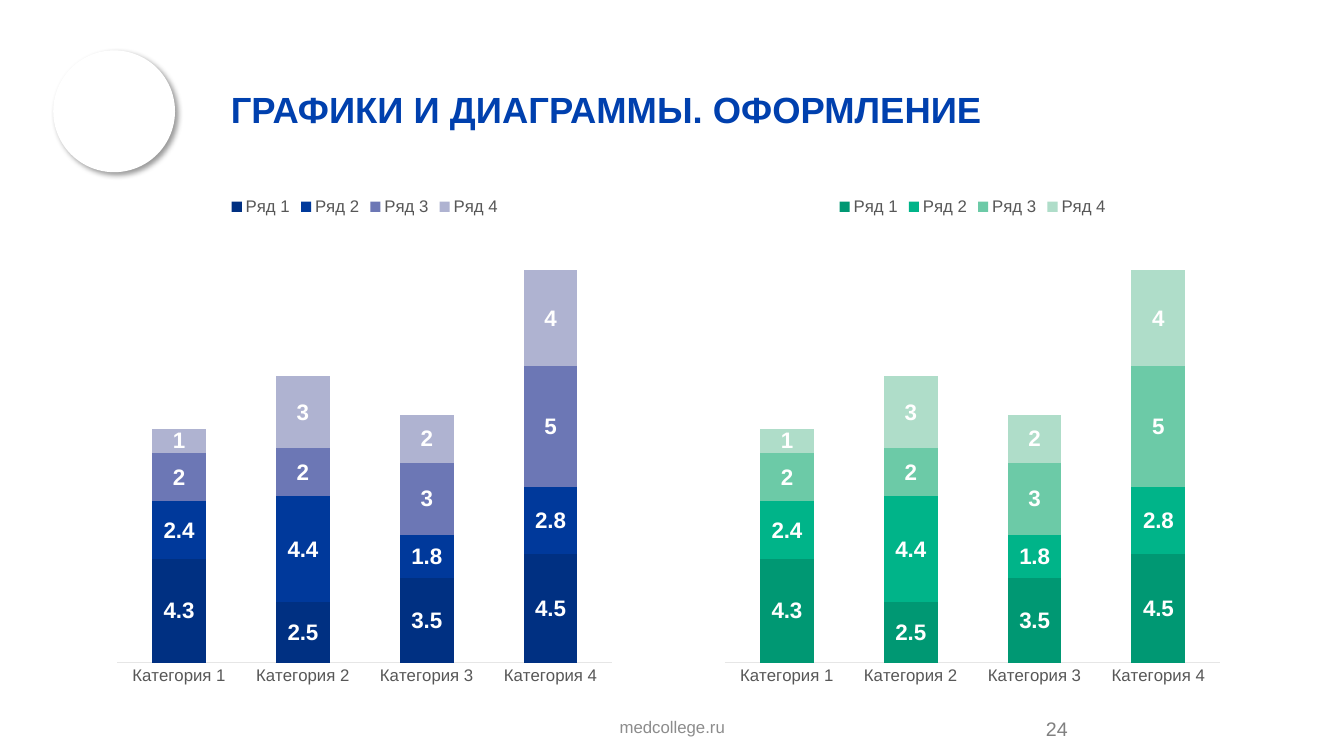
import pptx
import pptx.chart.data
import pptx.dml.color
import pptx.enum.chart
import pptx.enum.shapes
import pptx.enum.text
import pptx.oxml
import pptx.oxml.ns
import pptx.util

Pt = pptx.util.Pt
ALIGN = pptx.enum.text.PP_ALIGN
ANCHOR = pptx.enum.text.MSO_ANCHOR

CATEGORIES = [f"Категория {number}" for number in range(1, 5)]
SERIES = {
    "Ряд 1": (4.3, 2.5, 3.5, 4.5),
    "Ряд 2": (2.4, 4.4, 1.8, 2.8),
    "Ряд 3": (2, 2, 3, 5),
    "Ряд 4": (1, 3, 2, 4),
}
PALETTES = [
    ["003082", "00399B", "6C77B5", "AFB3D1"],
    ["009873", "00B489", "6CCAA7", "AFDDC9"],
]
CHART_TEXT = {"name": "Arial", "size": Pt(12), "color": "575757"}
LABEL_TEXT = {"name": "Arial", "size": Pt(16), "bold": True, "color": "FFFFFF"}
TITLE_TEXT = {"name": "Arial", "size": Pt(26), "bold": True, "color": "0040AE"}
FOOTER_TEXT = {"name": "Arial", "size": Pt(12), "color": "8C8C8C"}
NUMBER_TEXT = {"name": "Arial", "size": Pt(14), "color": "808080"}


def rgb(value):
    return pptx.dml.color.RGBColor.from_string(value)


def style_font(font, values):
    for name, value in values.items():
        if name == "color":
            font.color.rgb = rgb(value)
        else:
            setattr(font, name, value)


def in_points(box):
    return [Pt(length) for length in box]


def write_line(frame, text, font, **layout):
    para = frame.paragraphs[0]
    for name, value in layout.items():
        setattr(para, name, value)
    span = para.add_run()
    span.text = text
    style_font(span.font, font)


def add_emblem(page, box):
    """White disc with a soft shadow to the lower right."""
    disc = page.shapes.add_shape(pptx.enum.shapes.MSO_SHAPE.OVAL, *in_points(box))
    disc.fill.solid()
    disc.fill.fore_color.rgb = rgb("FFFFFF")
    disc.line.fill.background()
    disc.shadow.inherit = False
    effects = disc.element.spPr.find(pptx.oxml.ns.qn("a:effectLst"))
    effects.append(pptx.oxml.parse_xml(
        f'<a:outerShdw {pptx.oxml.ns.nsdecls("a")} blurRad="{Pt(4)}" dist="{Pt(3)}" '
        f'dir="{45 * 60000}" algn="tl" rotWithShape="0">'
        '<a:srgbClr val="000000"><a:alpha val="40000"/></a:srgbClr></a:outerShdw>'))


def add_title(page, box, text):
    title = page.shapes.title
    title.left, title.top, title.width, title.height = in_points(box)
    title.text_frame.vertical_anchor = ANCHOR.MIDDLE
    write_line(title.text_frame, text, TITLE_TEXT,
               alignment=ALIGN.LEFT, line_spacing=0.9)


def add_caption(page, box, text, font, anchor, alignment):
    frame = page.shapes.add_textbox(*in_points(box)).text_frame
    frame.word_wrap = True
    frame.vertical_anchor = anchor
    write_line(frame, text, font, alignment=alignment)


def fix_plot_area(chart):
    """Pin the inner plot area as fractions of the chart."""
    plot_area = chart.element.chart.plotArea
    layout = plot_area.find(pptx.oxml.ns.qn("c:layout"))
    if layout is not None:
        plot_area.remove(layout)
    fractions = {"x": 0.02, "y": 0.084, "w": 0.96, "h": 0.853}
    parts = '<c:layoutTarget val="inner"/><c:xMode val="edge"/><c:yMode val="edge"/>'
    parts += "".join(f'<c:{name} val="{value}"/>' for name, value in fractions.items())
    plot_area.insert(0, pptx.oxml.parse_xml(
        f'<c:layout {pptx.oxml.ns.nsdecls("c")}>'
        f"<c:manualLayout>{parts}</c:manualLayout></c:layout>"))


def style_axes(chart):
    categories, values = chart.category_axis, chart.value_axis
    no_tick = pptx.enum.chart.XL_TICK_MARK.NONE
    categories.major_tick_mark = no_tick
    categories.minor_tick_mark = no_tick
    style_font(categories.tick_labels.font, CHART_TEXT)
    categories.format.line.color.rgb = rgb("E6E6E6")
    categories.format.line.width = Pt(0.75)
    values.visible = False
    values.has_major_gridlines = False
    values.minimum_scale, values.maximum_scale = 0, 18


def add_stacked_chart(page, box, colors):
    data = pptx.chart.data.CategoryChartData()
    data.categories = CATEGORIES
    for name, values in SERIES.items():
        data.add_series(name, values)
    chart = page.shapes.add_chart(
        pptx.enum.chart.XL_CHART_TYPE.COLUMN_STACKED, *in_points(box), data).chart
    style_font(chart.font, CHART_TEXT | {"size": Pt(10)})
    chart.has_title = False
    chart.has_legend = True
    chart.legend.position = pptx.enum.chart.XL_LEGEND_POSITION.TOP
    chart.legend.include_in_layout = False
    style_font(chart.legend.font, CHART_TEXT)
    style_axes(chart)
    fix_plot_area(chart)

    plot = chart.plots[0]
    plot.gap_width, plot.overlap = 130, 100
    plot.vary_by_categories = False
    for series, color in zip(plot.series, colors):
        series.format.fill.solid()
        series.format.fill.fore_color.rgb = rgb(color)
        labels = series.data_labels
        labels.show_value = True
        labels.position = pptx.enum.chart.XL_LABEL_POSITION.CENTER
        style_font(labels.font, LABEL_TEXT)


def add_charts(page, box, gap):
    left, top, width, height = box
    chart_width = (width - gap * (len(PALETTES) - 1)) / len(PALETTES)
    for column, colors in enumerate(PALETTES):
        chart_left = left + column * (chart_width + gap)
        add_stacked_chart(page, (chart_left, top, chart_width, height), colors)


def main():
    deck = pptx.Presentation()
    deck.slide_width, deck.slide_height = Pt(960), Pt(540)
    page = deck.slides.add_slide(deck.slide_layouts.get_by_name("Title Only"))
    add_emblem(page, (38, 36, 87, 87))
    add_caption(page, (740, 505.5, 135.5, 29.5), "24", NUMBER_TEXT,
                ANCHOR.MIDDLE, ALIGN.LEFT)
    add_caption(page, (318.25, 508.25, 324, 29), "medcollege.ru", FOOTER_TEXT,
                ANCHOR.TOP, ALIGN.CENTER)
    add_title(page, (157.7, 36, 749, 87), "ГРАФИКИ И ДИАГРАММЫ. ОФОРМЛЕНИЕ")
    add_charts(page, (76.3, 133.2, 802.8, 363), gap=65.6)
    deck.save("out.pptx")


if __name__ == "__main__":
    main()
